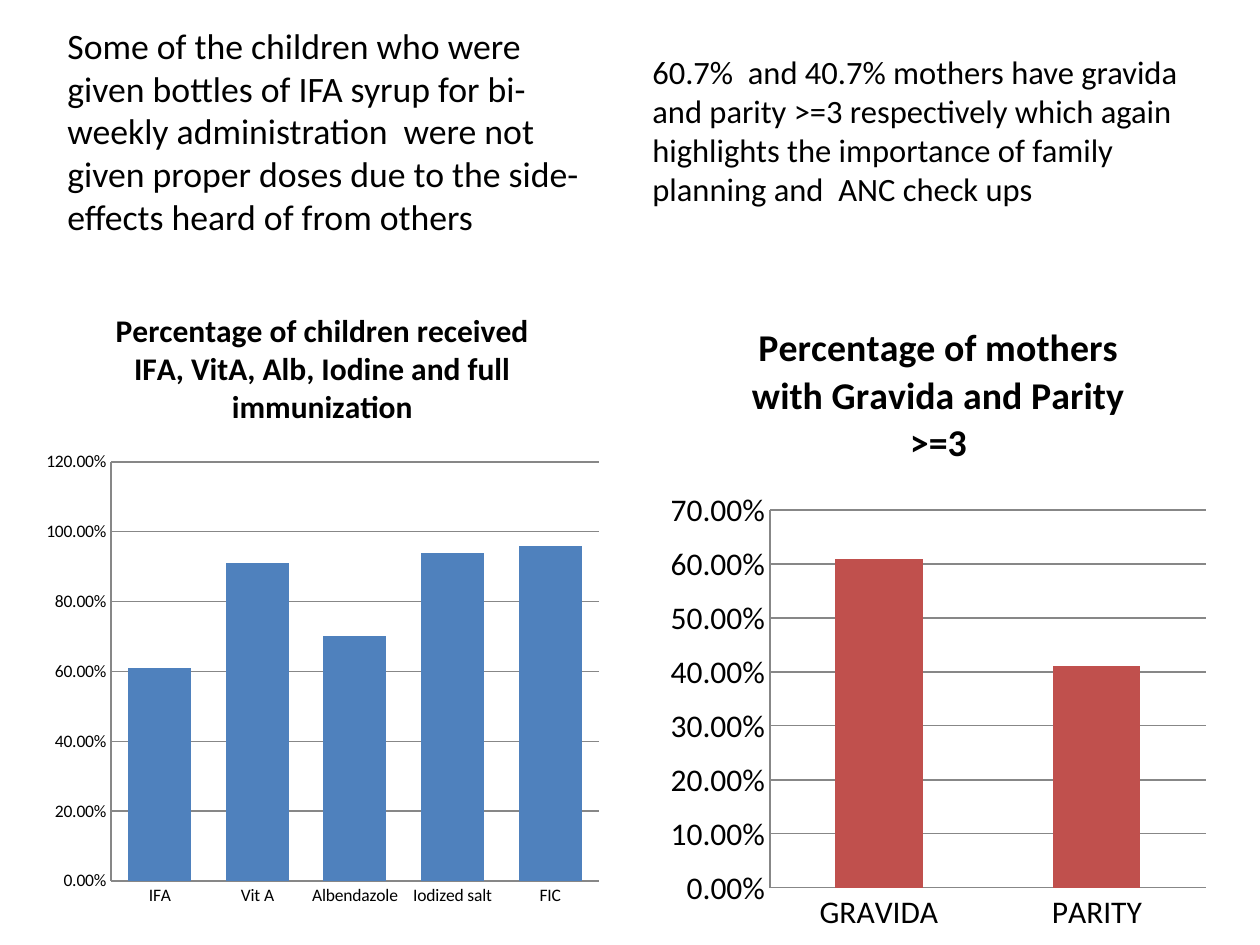
from dataclasses import dataclass

from lxml.etree import SubElement
from pptx import Presentation
from pptx.chart.data import CategoryChartData
from pptx.dml.color import RGBColor
from pptx.enum.chart import XL_CHART_TYPE, XL_TICK_MARK
from pptx.enum.text import MSO_ANCHOR
from pptx.oxml.ns import qn
from pptx.util import Emu, Pt

FONT = "Calibri"
COLORS = {"text": "000000", "axis": "878787", "children": "4F81BD", "mothers": "C0504D"}


@dataclass(frozen=True)
class Box:
    left: int
    top: int
    width: int
    height: int


@dataclass(frozen=True)
class Note:
    box: Box
    text: str
    size: float


@dataclass(frozen=True)
class BarChart:
    box: Box
    title_at: tuple[int, int] | None
    plot: Box
    kind: XL_CHART_TYPE
    title: str
    title_size: float
    size: float
    values: dict[str, float]
    color: str
    top: float
    step: float
    gap: int
    overlap: int


NOTES = [
    Note(Box(55, 55, 557, 189),
         "Some of the children who were given bottles of IFA syrup for bi-weekly "
         "administration  were not given proper doses due to the side- effects "
         "heard of from others", 20.4),
    Note(Box(640, 55, 557, 159),
         "60.7%  and 40.7% mothers have gravida and parity >=3 respectively which "
         "again highlights the importance of family planning and  ANC check ups", 18.6),
]

CHARTS = [
    BarChart(Box(35, 294, 576, 625), (110, 303), Box(111, 462, 488, 419),
             XL_CHART_TYPE.COLUMN_STACKED,
             "Percentage of children received IFA, VitA, Alb, Iodine and full immunization",
             18, 10,
             {"IFA": 0.61, "Vit A": 0.91, "Albendazole": 0.7, "Iodized salt": 0.94,
              "FIC": 0.96},
             "children", 1.2, 0.2, 55, 100),
    BarChart(Box(660, 294, 557, 651), None, Box(770, 510, 436, 378),
             XL_CHART_TYPE.COLUMN_CLUSTERED,
             "Percentage of mothers with Gravida and Parity >=3", 21.6, 18,
             {"GRAVIDA": 0.61, "PARITY": 0.41},
             "mothers", 0.7, 0.1, 150, 0),
]


def px(n: int) -> Emu:
    return Emu(round(n * 914400 / 126))


def place(box: Box) -> tuple[Emu, Emu, Emu, Emu]:
    return px(box.left), px(box.top), px(box.width), px(box.height)


def rgb(name: str) -> RGBColor:
    return RGBColor.from_string(COLORS[name])


def style(font, *, size: float, bold: bool = False, color: str = "text") -> None:
    font.name = FONT
    font.size = Pt(size)
    font.bold = bold
    font.color.rgb = rgb(color)


def write(tf, text: str, **fmt) -> None:
    r = tf.paragraphs[0].add_run()
    r.text = text
    style(r.font, **fmt)


def draw_note(s, note: Note) -> None:
    tf = s.shapes.add_textbox(*place(note.box)).text_frame
    tf.word_wrap = True
    tf.vertical_anchor = MSO_ANCHOR.BOTTOM
    write(tf, note.text, size=note.size)


def lay_out(parent, **settings: str | float) -> None:
    layout = parent.find(qn("c:layout"))
    if layout is None:
        layout = SubElement(parent, qn("c:layout"))
        parent.remove(layout)
        parent.insert(1 if parent.tag == qn("c:title") else 0, layout)
    manual = SubElement(layout, qn("c:manualLayout"))
    for name, value in settings.items():
        SubElement(manual, qn(f"c:{name}")).set("val", str(value))


def position_parts(chart, spec: BarChart) -> None:
    def fractions(left: int, top: int) -> dict[str, str | float]:
        return {"xMode": "edge", "yMode": "edge",
                "x": (left - spec.box.left) / spec.box.width,
                "y": (top - spec.box.top) / spec.box.height}

    if spec.title_at:
        lay_out(chart.chart_title._element, **fractions(*spec.title_at))
    plot = spec.plot
    lay_out(chart._chartSpace.chart.plotArea, layoutTarget="inner",
            **fractions(plot.left, plot.top),
            w=plot.width / spec.box.width, h=plot.height / spec.box.height)


def draw_chart(s, spec: BarChart) -> None:
    data = CategoryChartData(number_format="0.00%")
    data.categories = list(spec.values)
    data.add_series("Series 1", list(spec.values.values()))
    chart = s.shapes.add_chart(spec.kind, *place(spec.box), data).chart
    style(chart.font, size=spec.size)
    chart.has_legend = False
    chart.has_title = True
    write(chart.chart_title.text_frame, spec.title, size=spec.title_size, bold=True)
    chart.chart_title.include_in_layout = False
    position_parts(chart, spec)

    plot = chart.plots[0]
    plot.vary_by_categories = False
    plot.gap_width = spec.gap
    plot.overlap = spec.overlap
    fill = plot.series[0].format.fill
    fill.solid()
    fill.fore_color.rgb = rgb(spec.color)

    value = chart.value_axis
    value.minimum_scale, value.maximum_scale = 0, spec.top
    value.major_unit = spec.step
    value.has_major_gridlines = True
    value.tick_labels.number_format = "0.00%"
    value.tick_labels.number_format_is_linked = False
    for axis in (value, chart.category_axis):
        axis.major_tick_mark = axis.minor_tick_mark = XL_TICK_MARK.NONE
    for part in (value, chart.category_axis, value.major_gridlines):
        part.format.line.color.rgb = rgb("axis")
        part.format.line.width = Pt(0.75)


def main() -> None:
    """Build the slide of two notes above two column charts."""
    prs = Presentation()
    prs.slide_width, prs.slide_height = px(1260), px(945)
    s = prs.slides.add_slide(prs.slide_layouts[6])
    for note in NOTES:
        draw_note(s, note)
    for spec in CHARTS:
        draw_chart(s, spec)
    prs.save("out.pptx")


if __name__ == "__main__":
    main()
